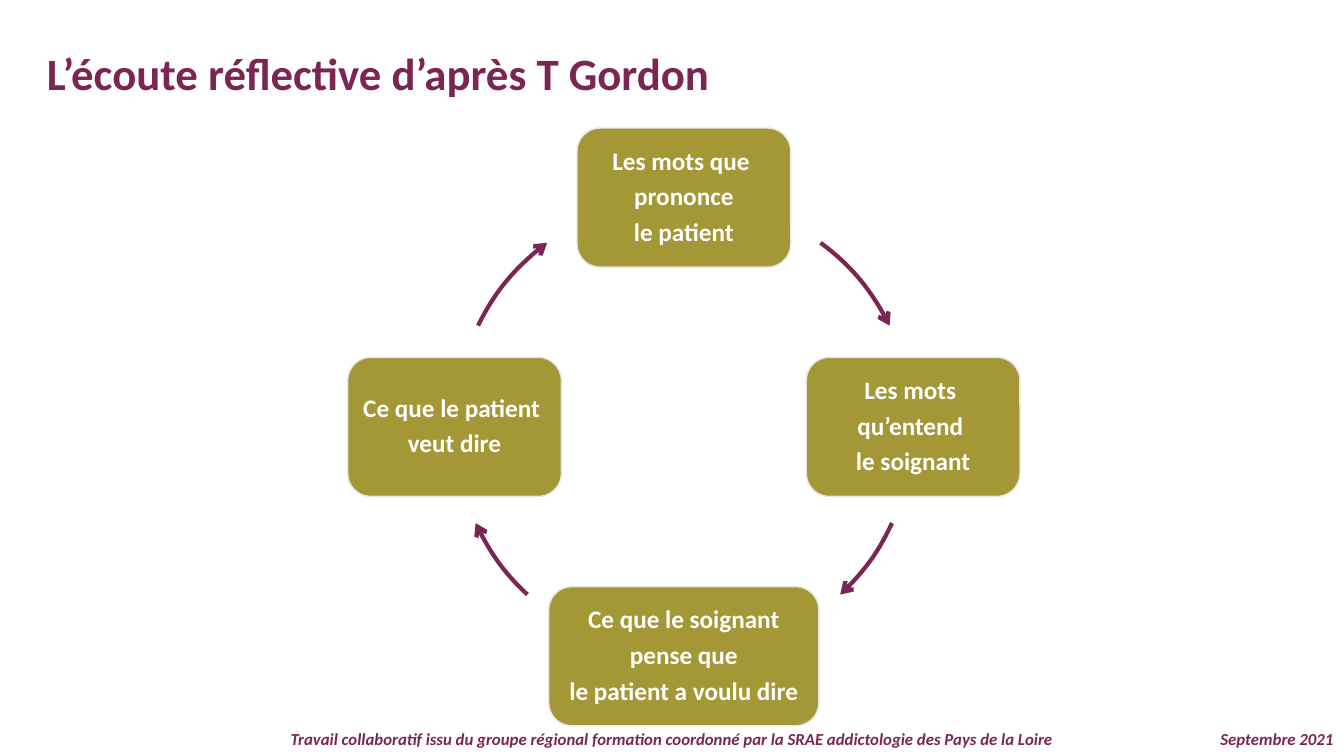
"""Build the reflective listening cycle slide."""
import math
from dataclasses import dataclass

from lxml import etree
from pptx import Presentation
from pptx import util as u
from pptx.dml.color import RGBColor
from pptx.enum import shapes, text
from pptx.oxml.ns import qn

PX = 4572
CENTER_X, CENTER_Y, RADIUS = 1357, 847, 455
BOX_W, WIDE_BOX_W, BOX_H = 424, 536, 276
TITLE_ONLY = 5


@dataclass(frozen=True)
class Theme:
    """Hold the colours, font and type sizes of the slide."""
    plum: RGBColor = RGBColor.from_string("7A2553")
    olive: RGBColor = RGBColor.from_string("A49735")
    edge: RGBColor = RGBColor.from_string("E7E6E6")
    white: RGBColor = RGBColor.from_string("FFFFFF")
    font: str = "Calibri"
    title: int = 32
    box: int = 18
    footer: int = 12


THEME = Theme()

STAGES = [
    (-90, BOX_W, ["Les mots que ", "prononce", "le patient"]),
    (0, BOX_W, ["Les mots ", "qu’entend ", "le soignant"]),
    (90, WIDE_BOX_W, ["Ce que le soignant", "pense que", "le patient a voulu dire"]),
    (180, BOX_W, ["Ce que le patient ", "veut dire"]),
]
ARROWS = [(-53.4, -26.2), (24.8, 47), (133, 155.2), (206.2, 233.4)]


def px(n):
    """Turn pixels into EMU."""
    return u.Emu(round(n * PX))


def on_circle(degrees, tangent=0.0):
    """Return a position on the cycle, moved along its tangent by a share of the radius."""
    a = math.radians(degrees)
    return (CENTER_X + RADIUS * (math.cos(a) - tangent * math.sin(a)),
            CENTER_Y + RADIUS * (math.sin(a) + tangent * math.cos(a)))


def write(tf, lines, *, size, color, align, italic=False, spacing=1.0, after=0,
          anchor=text.MSO_ANCHOR.TOP):
    """Fill a text frame with formatted bold paragraphs."""
    tf.word_wrap = True
    tf.vertical_anchor = anchor
    for i, line in enumerate(lines):
        p = tf.add_paragraph() if i else tf.paragraphs[0]
        p.alignment = align
        p.line_spacing = spacing
        p.space_before, p.space_after = u.Pt(0), u.Pt(after)
        r = p.add_run()
        r.text = line
        r.font.name, r.font.size = THEME.font, u.Pt(size)
        r.font.bold, r.font.italic = True, italic
        r.font.color.rgb = color


def add_title(slide, title):
    """Place the slide title."""
    sp = slide.shapes.title
    sp.left, sp.top, sp.width, sp.height = px(73), px(81), px(2594), px(128)
    write(sp.text_frame, [title], size=THEME.title, color=THEME.plum,
          align=text.PP_ALIGN.LEFT)


def add_footer(slide, left, width, line, align):
    """Add one line of text at the foot of the slide."""
    sp = slide.shapes.add_textbox(px(left), px(1440), px(width), px(60))
    write(sp.text_frame, [line], size=THEME.footer, color=THEME.plum,
          align=align, italic=True, spacing=0.9)


def add_stage(slide, degrees, width, lines):
    """Add a rounded box centred on the cycle."""
    x, y = on_circle(degrees)
    sp = slide.shapes.add_shape(shapes.MSO_SHAPE.ROUNDED_RECTANGLE,
                                px(x - width / 2), px(y - BOX_H / 2), px(width), px(BOX_H))
    sp.shadow.inherit = False
    sp.fill.solid()
    sp.fill.fore_color.rgb = THEME.olive
    sp.line.color.rgb = THEME.edge
    sp.line.width = u.Pt(1)
    tf = sp.text_frame
    tf.margin_left = tf.margin_right = tf.margin_top = tf.margin_bottom = px(14)
    write(tf, lines, size=THEME.box, color=THEME.white, align=text.PP_ALIGN.CENTER,
          spacing=0.9, after=6, anchor=text.MSO_ANCHOR.MIDDLE)


def fit_to_circle(sp):
    """Turn a freeform's three segments into one curve framed by the whole circle."""
    left, top, side = px(CENTER_X - RADIUS), px(CENTER_Y - RADIUS), px(2 * RADIUS)
    path = next(sp._element.iter(qn("a:path")))
    for pt in path.iter(qn("a:pt")):
        pt.set("x", str(int(pt.get("x")) + sp.left - left))
        pt.set("y", str(int(pt.get("y")) + sp.top - top))
    curve = etree.SubElement(path, qn("a:cubicBezTo"))
    for segment in path.findall(qn("a:lnTo")):
        curve.append(segment[0])
        path.remove(segment)
    path.set("w", str(side))
    path.set("h", str(side))
    sp.left, sp.top, sp.width, sp.height = left, top, side, side


def add_arc_arrow(slide, start, end):
    """Add a curved arrow along the cycle between two angles."""
    pull = 4 / 3 * math.tan(math.radians(end - start) / 4)
    corners = [on_circle(start), on_circle(start, pull), on_circle(end, -pull), on_circle(end)]
    first, *others = [tuple(map(px, corner)) for corner in corners]
    builder = slide.shapes.build_freeform(*first)
    builder.add_line_segments(others, close=False)
    sp = builder.convert_to_shape()
    fit_to_circle(sp)
    sp.shadow.inherit = False
    sp.fill.background()
    sp.line.color.rgb = THEME.plum
    sp.line.width = u.Pt(3)
    ln = sp._element.spPr.find(qn("a:ln"))
    etree.SubElement(ln, qn("a:tailEnd"), type="arrow")


def main():
    """Build and save the slide."""
    prs = Presentation()
    prs.slide_width, prs.slide_height = px(2667), px(1500)
    slide = prs.slides.add_slide(prs.slide_layouts[TITLE_ONLY])
    add_footer(slide, 0, 2667,
               "Travail collaboratif issu du groupe régional formation coordonné "
               "par la SRAE addictologie des Pays de la Loire", text.PP_ALIGN.CENTER)
    add_footer(slide, 2350, 316, "Septembre 2021", text.PP_ALIGN.RIGHT)
    add_title(slide, "L’écoute réflective d’après T Gordon")
    for stage, arrow in zip(STAGES, ARROWS):
        add_stage(slide, *stage)
        add_arc_arrow(slide, *arrow)
    prs.save("out.pptx")


if __name__ == "__main__":
    main()
